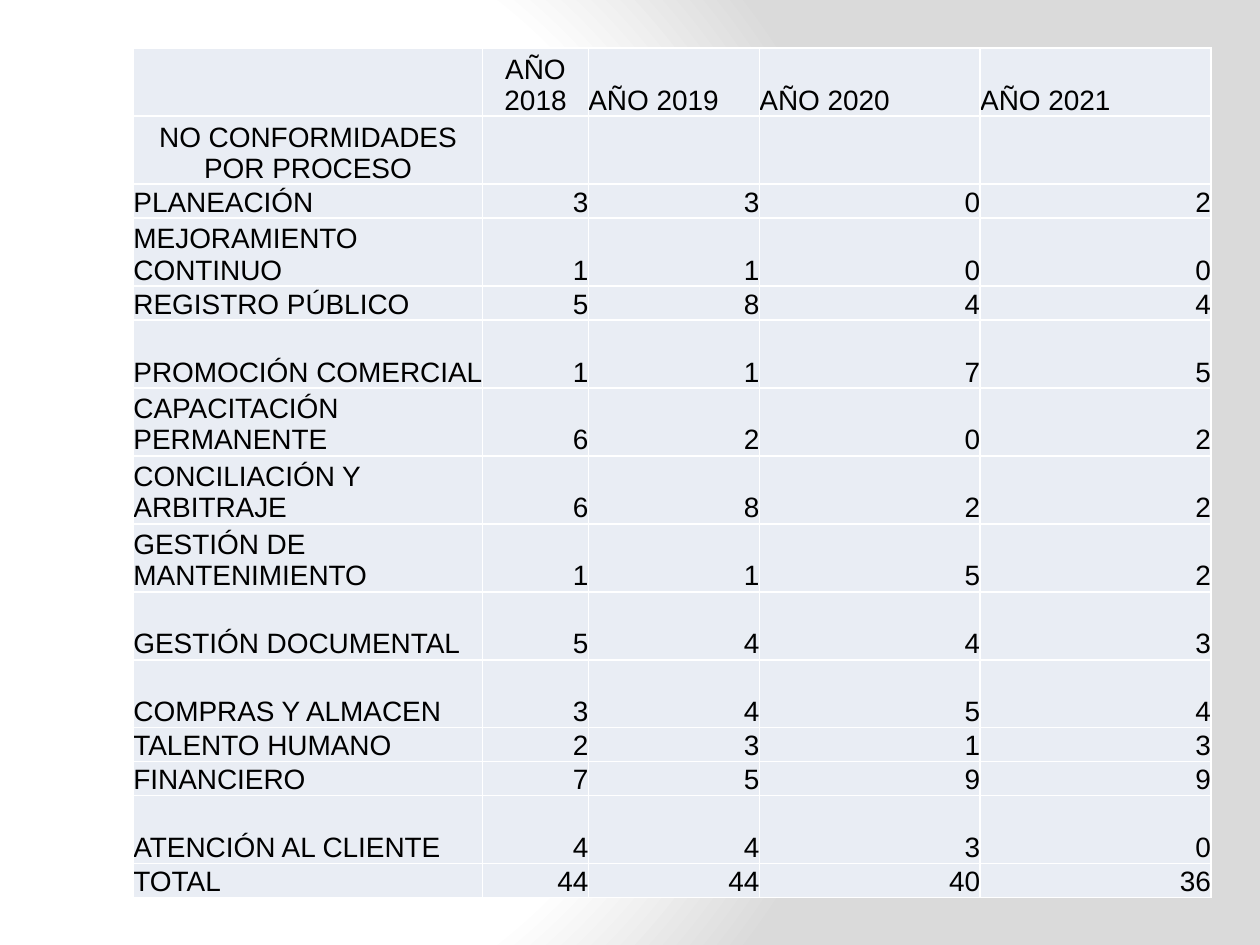
from pptx import Presentation
from pptx.dml.color import RGBColor as RGB
from pptx.enum.text import MSO_ANCHOR as Anchor, PP_ALIGN as Align
from pptx.oxml import parse_xml
from pptx.oxml.ns import nsdecls
from pptx.util import Cm, Pt

UNIT = 1.37 / 2
WIDTHS = (7.04, 2.13, 3.45, 4.45, 4.65)
ROWS = (
    (2, "", "AÑO 2018", "AÑO 2019", "AÑO 2020", "AÑO 2021"),
    (2, "NO CONFORMIDADES POR PROCESO", "", "", "", ""),
    (1, "PLANEACIÓN", 3, 3, 0, 2),
    (2, "MEJORAMIENTO CONTINUO", 1, 1, 0, 0),
    (1, "REGISTRO PÚBLICO", 5, 8, 4, 4),
    (2, "PROMOCIÓN COMERCIAL", 1, 1, 7, 5),
    (2, "CAPACITACIÓN PERMANENTE", 6, 2, 0, 2),
    (2, "CONCILIACIÓN Y ARBITRAJE", 6, 8, 2, 2),
    (2, "GESTIÓN DE MANTENIMIENTO", 1, 1, 5, 2),
    (2, "GESTIÓN DOCUMENTAL", 5, 4, 4, 3),
    (2, "COMPRAS Y ALMACEN", 3, 4, 5, 4),
    (1, "TALENTO HUMANO", 2, 3, 1, 3),
    (1, "FINANCIERO", 7, 5, 9, 9),
    (2, "ATENCIÓN AL CLIENTE", 4, 4, 3, 0),
    (1, "TOTAL", 44, 44, 40, 36),
)
CENTRED = ("AÑO 2018", "NO CONFORMIDADES POR PROCESO")
CELL = {"margin_left": 0, "margin_right": 0, "margin_top": 0,
        "margin_bottom": 0, "vertical_anchor": Anchor.BOTTOM}
FONT = {"name": "Arial", "size": Pt(16), "bold": False}


def color(code):
    """Turn a hex string into a colour."""
    return RGB.from_string(code)


def style(item, form):
    """Set every attribute held in a format dict."""
    for name, value in form.items():
        setattr(item, name, value)


def shade(slide, stops):
    """Give the slide a round gradient background."""
    marks = "".join(f'<a:gs pos="{pos * 1000}"><a:srgbClr val="{code}"/></a:gs>'
                    for pos, code in stops)
    grad = parse_xml(
        f'<a:gradFill {nsdecls("a")} rotWithShape="1"><a:gsLst>{marks}</a:gsLst>'
        '<a:path path="circle"><a:fillToRect l="20000" t="50000" r="100000" '
        'b="50000"/></a:path></a:gradFill>')
    slide.background.fill.solid()
    props = slide._element.cSld.bg.bgPr
    props.replace(props[0], grad)


def edge(cell, code, width):
    """Draw the four borders of a cell."""
    props = cell._tc.get_or_add_tcPr()
    for side in "LRTB":
        props.append(parse_xml(
            f'<a:ln{side} {nsdecls("a")} w="{Pt(width)}"><a:solidFill>'
            f'<a:srgbClr val="{code}"/></a:solidFill></a:ln{side}>'))


def align(value):
    """Choose the alignment that suits a cell value."""
    if value in CENTRED:
        return Align.CENTER
    return Align.RIGHT if isinstance(value, int) else Align.LEFT


def write(cell, value):
    """Fill, frame and write one cell."""
    style(cell, CELL)
    edge(cell, "FFFFFF", 1)
    cell.fill.solid()
    cell.fill.fore_color.rgb = color("E9EDF4")
    if value == "":
        return
    para = cell.text_frame.paragraphs[0]
    para.alignment = align(value)
    run = para.add_run()
    run.text = str(value)
    style(run.font, FONT)
    run.font.color.rgb = color("000000")


def grid(slide, left, top):
    """Add the table of findings by process and year."""
    high = UNIT * sum(row[0] for row in ROWS)
    table = slide.shapes.add_table(len(ROWS), len(WIDTHS), Cm(left), Cm(top),
                                   Cm(sum(WIDTHS)), Cm(high)).table
    style(table, {"first_row": False, "horz_banding": False})
    for col, width in zip(table.columns, WIDTHS):
        col.width = Cm(width)
    for row, (lines, *values) in zip(table.rows, ROWS):
        row.height = Cm(UNIT * lines)
        for cell, value in zip(row.cells, values):
            write(cell, value)


def main():
    """Build and save the slide."""
    deck = Presentation()
    style(deck, {"slide_width": Cm(25.4), "slide_height": Cm(19.05)})
    slide = deck.slides.add_slide(deck.slide_layouts[6])
    shade(slide, ((0, "FFFFFF"), (75, "FFFFFF"), (100, "DADADA")))
    grid(slide, 2.69, 0.97)
    deck.save("out.pptx")


if __name__ == "__main__":
    main()
